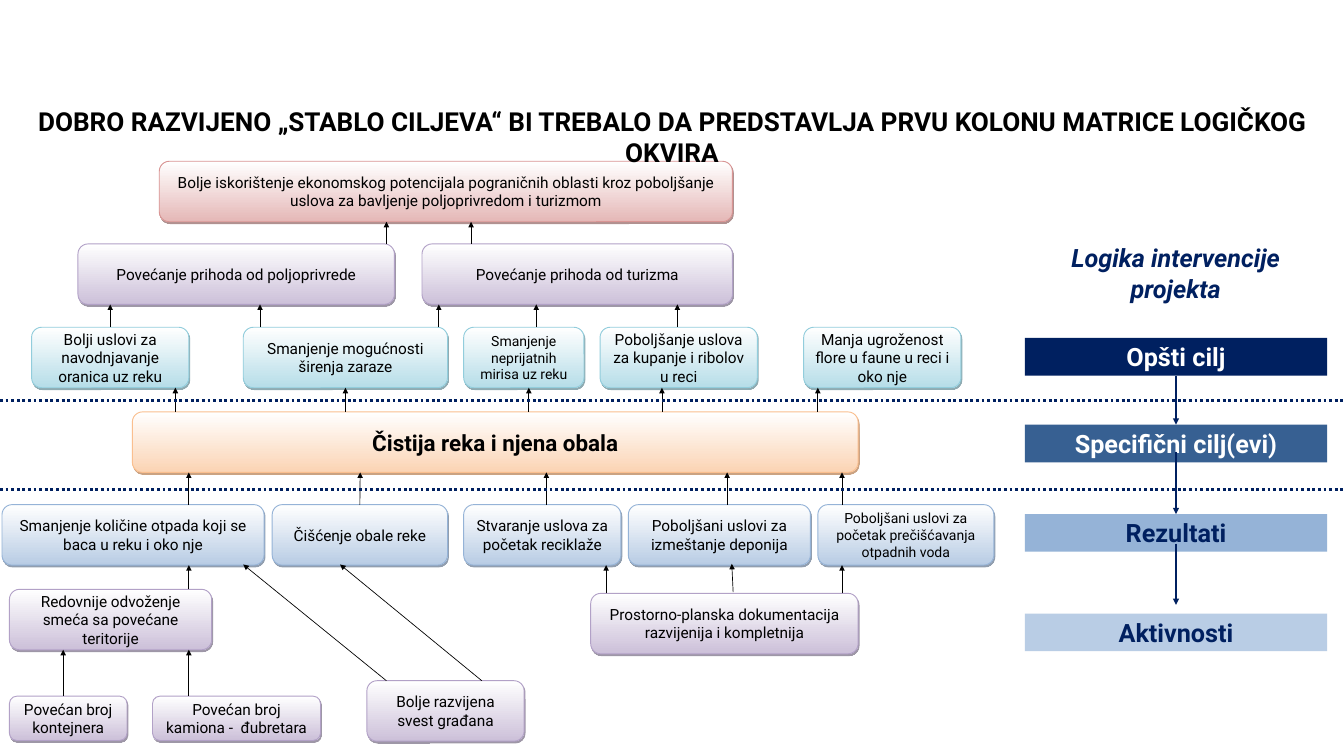
from lxml import etree
from pptx import Presentation
from pptx.dml.color import RGBColor
from pptx.enum.dml import MSO_LINE
from pptx.enum.shapes import MSO_CONNECTOR, MSO_SHAPE
from pptx.enum.text import MSO_ANCHOR, MSO_AUTO_SIZE, PP_ALIGN
from pptx.oxml.ns import qn
from pptx.util import Inches, Pt

ROUNDED, RECTANGLE = MSO_SHAPE.ROUNDED_RECTANGLE, MSO_SHAPE.RECTANGLE
STRAIGHT, DOTTED = MSO_CONNECTOR.STRAIGHT, MSO_LINE.ROUND_DOT
MIDDLE, TOP, CENTER = MSO_ANCHOR.MIDDLE, MSO_ANCHOR.TOP, PP_ALIGN.CENTER
GROW = MSO_AUTO_SIZE.SHAPE_TO_FIT_TEXT
TOP_SIDE, BOTTOM_SIDE = 0, 2

COLORS = {
    "black": "000000", "white": "FFFFFF", "navy": "002060",
    "steel": "376092", "sky": "95B3D7", "pale": "B9CDE5",
}
# Box palettes: gradient end, outline, shadow
PALETTES = {
    "red": ("E5B8B7", "D99594", "622423"),
    "purple": ("CCC0D9", "B2A1C7", "3F3151"),
    "teal": ("B6DDE8", "92CDDC", "205867"),
    "orange": ("FBD4B4", "FABF8F", "974706"),
    "blue": ("B8CCE4", "95B3D7", "243F60"),
}


def rgb(value):
    return RGBColor.from_string(value)


def write_text(shape, text, size=16.5, color="black", bold=False, italic=False,
               anchor=MIDDLE, grow=False):
    frame = shape.text_frame
    frame.word_wrap = True
    frame.vertical_anchor = anchor
    if grow:
        frame.auto_size = GROW
    frame.text = text
    for paragraph in frame.paragraphs:
        paragraph.alignment = CENTER
        font = paragraph.font
        font.name, font.size = "Roboto", Pt(size)
        font.bold, font.italic = bold, italic
        font.color.rgb = rgb(COLORS[color])


class ObjectiveTree:
    """Style and current slide of the objective tree."""

    def __init__(self, slide):
        self.shapes = slide.shapes

    def box(self, palette, left, top, width, text, height=0.9, **text_format):
        end, outline, shadow = PALETTES[palette]
        shape = self.shapes.add_shape(ROUNDED, Inches(left), Inches(top),
                                      Inches(width), Inches(height))
        shape.fill.gradient()
        shape.fill.gradient_angle = 270
        for stop, color, position in zip(shape.fill.gradient_stops,
                                         (COLORS["white"], end), (0, 1)):
            stop.color.rgb = rgb(color)
            stop.position = position
        shape.line.color.rgb = rgb(outline)
        shape.line.width = Pt(1)
        self.add_shadow(shape, shadow)
        write_text(shape, text, **text_format)
        return shape

    def add_shadow(self, shape, color):
        shape.shadow.inherit = False
        effects = shape.fill._xPr.find(qn("a:effectLst"))
        outer = etree.SubElement(effects, qn("a:outerShdw"), blurRad="0",
                                 dist=str(Pt(2.2)), dir=str(63 * 60000),
                                 algn="ctr", rotWithShape="0")
        tone = etree.SubElement(outer, qn("a:srgbClr"), val=color)
        etree.SubElement(tone, qn("a:alpha"), val="50000")

    def level(self, top, text, fill, color):
        shape = self.shapes.add_shape(RECTANGLE, Inches(15.25), Inches(top),
                                      Inches(4.5), Inches(0.56))
        shape.shadow.inherit = False
        shape.fill.solid()
        shape.fill.fore_color.rgb = rgb(COLORS[fill])
        shape.line.fill.background()
        write_text(shape, text, size=27, color=color, bold=True, grow=True)
        return shape

    def label(self, left, top, width, height, text, **text_format):
        shape = self.shapes.add_textbox(Inches(left), Inches(top),
                                        Inches(width), Inches(height))
        write_text(shape, text, bold=True, anchor=TOP, grow=True, **text_format)

    def line(self, start, end, color="black", width=0.75):
        connector = self.shapes.add_connector(STRAIGHT, *map(Inches, start + end))
        connector.line.color.rgb = rgb(COLORS[color])
        connector.line.width = Pt(width)
        etree.SubElement(connector.line._get_or_add_ln().getparent(),
                         qn("a:effectLst"))
        return connector

    def arrow(self, start, end, source=None, target=None, **line_format):
        connector = self.line(start, end, **line_format)
        etree.SubElement(connector.line._get_or_add_ln(), qn("a:tailEnd"),
                         type="triangle")
        if source:
            connector.begin_connect(*source)
        if target:
            connector.end_connect(*target)

    def divider(self, y):
        self.line((0, y), (20, y), color="navy", width=3).line.dash_style = DOTTED


def main():
    presentation = Presentation()
    presentation.slide_width = Inches(20)
    presentation.slide_height = Inches(11.25)
    tree = ObjectiveTree(presentation.slides.add_slide(presentation.slide_layouts[6]))

    # Overall objective and its effects
    tree.box("red", 2.37, 2.4, 8.53, "Bolje iskorištenje ekonomskog potencijala "
             "pograničnih oblasti kroz poboljšanje uslova za bavljenje "
             "poljoprivredom i turizmom")
    tree.box("purple", 1.16, 3.63, 4.71, "Povećanje prihoda od poljoprivrede")
    tree.box("purple", 6.28, 3.63, 4.62, "Povećanje prihoda od turizma")
    irrigation, infection, *_ = [
        tree.box("teal", left, 4.87, width, text, size=size)
        for left, width, size, text in (
            (0.47, 2.34, 16.5, "Bolji uslovi za navodnjavanje oranica uz reku"),
            (3.62, 3.04, 16.5, "Smanjenje mogućnosti širenja zaraze"),
            (6.9, 1.79, 15, "Smanjenje neprijatnih mirisa uz reku"),
            (8.93, 2.34, 16.5, "Poboljšanje uslova za kupanje i ribolov u reci"),
            (11.96, 2.34, 16.5, "Manja ugroženost flore u faune u reci i oko nje"),
        )]

    # Specific objective and results
    tree.box("orange", 1.97, 6.13, 10.8, "Čistija reka i njena obala",
             size=24, bold=True)
    _, cleaning, *_ = [
        tree.box("blue", left, 7.51, width, text, size=size)
        for left, width, size, text in (
            (0.03, 3.9, 16.5, "Smanjenje količine otpada koji se baca u reku i oko nje"),
            (4.05, 2.61, 16.5, "Čišćenje obale reke"),
            (6.9, 2.34, 16.5, "Stvaranje uslova za početak reciklaže"),
            (9.35, 2.71, 16.5, "Poboljšani uslovi za izmeštanje deponija"),
            (12.17, 2.62, 15,
             "Poboljšani uslovi za početak prečišćavanja otpadnih voda"),
        )]

    # Activities
    for left, top, width, height, text in (
        (0.14, 8.77, 3.01, 0.9, "Redovnije odvoženje smeća sa povećane teritorije"),
        (8.79, 8.83, 3.98, 0.9,
         "Prostorno-planska dokumentacija razvijenija i kompletnija"),
        (5.46, 10.13, 2.34, 0.9, "Bolje razvijena svest građana"),
        (0.14, 10.36, 1.75, 0.66, "Povećan broj kontejnera"),
        (2.27, 10.36, 2.5, 0.66, "Povećan broj\nkamiona -  đubretara"),
    ):
        tree.box("purple", left, top, width, text, height=height)

    # Upright arrows, one row per gap between levels
    for bottom, top, columns in (
        (3.63, 3.3, (5.75, 7.01)),
        (4.87, 4.53, (3.87, 6.53, 7.98, 10.08)),
        (6.13, 5.77, (2.61, 7.87, 9.85, 12.17)),
        (7.51, 7.03, (2.81, 8.13, 10.82, 12.53)),
        (8.83, 8.41, (9.02, 12.53)),
        (8.77, 8.41, (2.81,)),
        (10.36, 9.67, (0.94, 2.81)),
    ):
        for x in columns:
            tree.arrow((x, bottom), (x, top))

    # Arrows joined to the middle of a box
    tree.arrow((1.64, 4.87), (1.64, 4.53), source=(irrigation, TOP_SIDE))
    tree.arrow((5.14, 6.13), (5.14, 5.77), target=(infection, BOTTOM_SIDE))
    tree.arrow((5.36, 7.51), (5.36, 7.03), source=(cleaning, TOP_SIDE))

    # Slanted arrows
    tree.arrow((10.91, 8.81), (10.89, 8.39))
    tree.arrow((5.75, 10.13), (3.62, 8.4))
    tree.arrow((7.17, 10.13), (5.06, 8.4))

    # Title
    tree.label(0, 1.52, 20, 0.57, "DOBRO RAZVIJENO „STABLO CILJEVA“ BI TREBALO DA "
               "PREDSTAVLJA PRVU KOLONU MATRICE LOGIČKOG OKVIRA", size=28)

    # Intervention logic and level dividers
    tree.label(15.24, 3.56, 4.51, 1.01, "Logika intervencije\nprojekta",
               size=27, color="navy", italic=True)
    overall = tree.level(5.03, "Opšti cilj", "navy", "white")
    specific = tree.level(6.32, "Specifični cilj(evi)", "steel", "white")
    results = tree.level(7.65, "Rezultati", "sky", "navy")
    tree.level(9.13, "Aktivnosti", "pale", "navy")
    for y in (5.96, 7.29):
        tree.divider(y)
    logic = {"color": "navy", "width": 2.25}
    tree.arrow((17.5, 5.59), (17.5, 6.32), source=(overall, BOTTOM_SIDE),
               target=(specific, TOP_SIDE), **logic)
    tree.arrow((17.5, 6.72), (17.5, 7.65), target=(results, TOP_SIDE), **logic)
    tree.arrow((17.5, 8.09), (17.5, 9), **logic)

    presentation.save("out.pptx")


if __name__ == "__main__":
    main()
